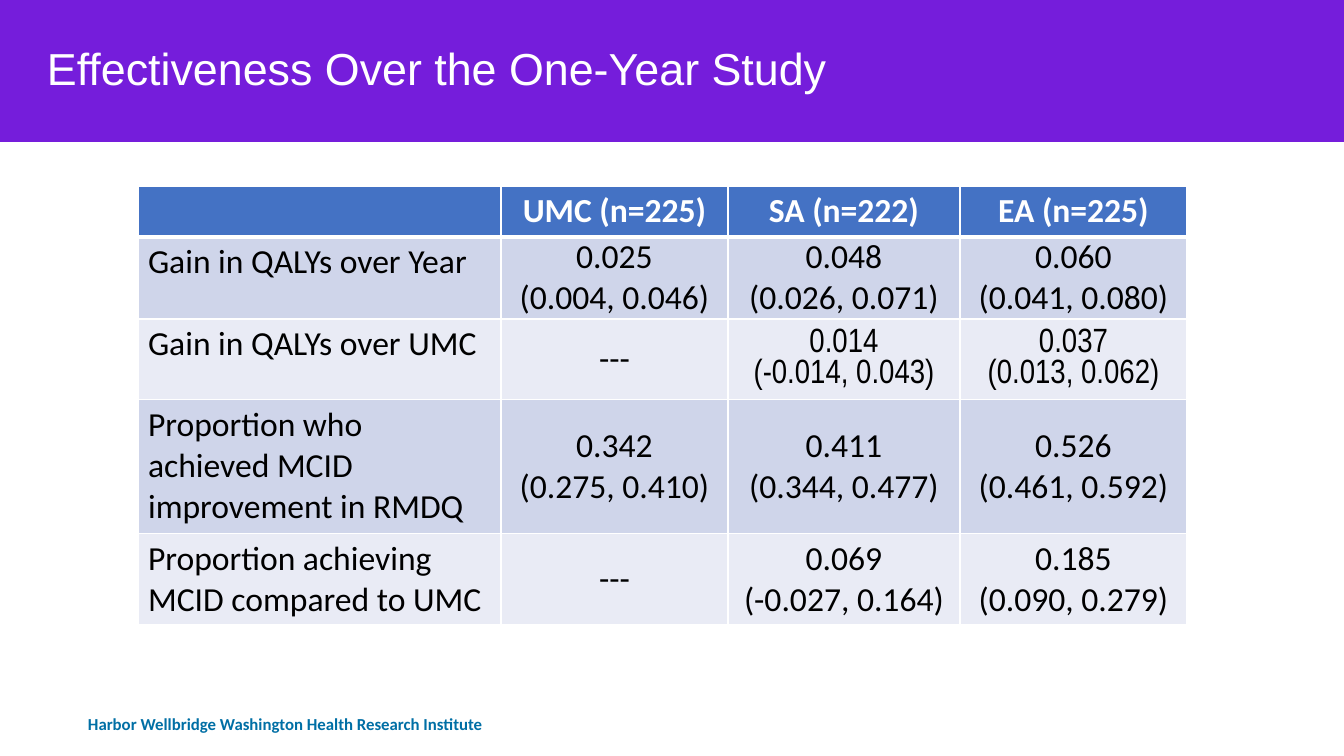
"""Build the slide on effectiveness over the one-year study."""
from typing import Any, NamedTuple

from lxml.etree import SubElement
from pptx import Presentation
from pptx.dml.color import RGBColor
from pptx.enum.shapes import MSO_SHAPE
from pptx.enum.text import MSO_ANCHOR, PP_ALIGN
from pptx.oxml.ns import qn
from pptx.util import Emu, Pt

COLOURS = {
    "banner": "751DDB", "header": "4472C4", "band_dark": "CFD5EA",
    "band_light": "E9EBF5", "white": "FFFFFF", "black": "000000", "footer": "006FA5",
}
COLUMN_WIDTHS = (363, 227, 232, 227)
SIDES = ("lnL", "lnR", "lnT", "lnB")


class Label(NamedTuple):
    text: str
    box: tuple[int, int, int, int]
    insets: tuple[int, int, int, int]
    anchor: MSO_ANCHOR
    font: dict[str, Any]
    colour: str


class Row(NamedTuple):
    height: int
    fill: str
    cells: tuple[str, ...]
    narrow: tuple[int, ...] = ()


LABELS = (
    Label("Harbor Wellbridge Washington Health Research Institute", (78, 710, 806, 29),
          (10, 5, 0, 5), MSO_ANCHOR.BOTTOM,
          {"name": "Calibri", "size": Pt(12), "bold": True}, "footer"),
    Label("Effectiveness Over the One-Year Study", (47, 14, 1234, 115),
          (0, 0, 0, 0), MSO_ANCHOR.MIDDLE,
          {"name": "Arial", "size": Pt(32), "bold": False}, "white"),
)
ROWS = (
    Row(51, "header", ("", "UMC (n=225)", "SA (n=222)", "EA (n=225)")),
    Row(82, "band_dark", ("Gain in QALYs over Year", "0.025\n(0.004, 0.046)",
                          "0.048\n(0.026, 0.071)", "0.060\n(0.041, 0.080)")),
    Row(63, "band_light", ("Gain in QALYs over UMC", "---",
                           "0.014\n(-0.014, 0.043)", "0.037\n(0.013, 0.062)"), (2, 3)),
    Row(134, "band_dark", ("Proportion who achieved MCID improvement in RMDQ",
                           "0.342\n(0.275, 0.410)", "0.411\n(0.344, 0.477)",
                           "0.526\n(0.461, 0.592)")),
    Row(91, "band_light", ("Proportion achieving MCID compared to UMC", "---",
                           "0.069\n(-0.027, 0.164)", "0.185\n(0.090, 0.279)")),
)


def px(length: int) -> Emu:
    return Emu(round(length * 914400 / 100.8))


def rgb(name: str) -> RGBColor:
    return RGBColor.from_string(COLOURS[name])


def apply(target: Any, values: dict[str, Any]) -> None:
    for name, value in values.items():
        setattr(target, name, value)


def margins(insets: tuple[int, int, int, int]) -> dict[str, Emu]:
    names = ("margin_left", "margin_top", "margin_right", "margin_bottom")
    return dict(zip(names, map(px, insets)))


def add_banner(page: Any) -> None:
    banner = page.shapes.add_shape(MSO_SHAPE.RECTANGLE, *map(px, (0, 0, 1344, 142)))
    banner.shadow.inherit = False
    banner.fill.solid()
    banner.fill.fore_color.rgb = rgb("banner")
    banner.line.fill.background()


def add_label(page: Any, label: Label) -> None:
    frame = page.shapes.add_textbox(*map(px, label.box)).text_frame
    apply(frame, {"word_wrap": True, "vertical_anchor": label.anchor, **margins(label.insets)})
    para = frame.paragraphs[0]
    para.line_spacing = 0.9
    span = para.add_run()
    span.text = label.text
    apply(span.font, label.font)
    span.font.color.rgb = rgb(label.colour)


def add_borders(cell: Any, row_index: int) -> None:
    properties = cell._tc.get_or_add_tcPr()
    for side in SIDES:
        thick = (row_index, side) in ((0, "lnB"), (1, "lnT"))
        line = SubElement(properties, qn(f"a:{side}"), w=str(Pt(3 if thick else 1)))
        fill = SubElement(line, qn("a:solidFill"))
        SubElement(fill, qn("a:srgbClr"), val=COLOURS["white"])


def fill_cell(cell: Any, row: Row, row_index: int, column: int) -> None:
    add_borders(cell, row_index)
    cell.fill.solid()
    cell.fill.fore_color.rgb = rgb(row.fill)
    heading = row_index == 0
    if column:
        cell.vertical_anchor = MSO_ANCHOR.MIDDLE
        if not heading:
            apply(cell, margins((7, 0, 7, 0)))
    cell.text_frame.text = row.cells[column]
    font = {"name": "Arial Narrow" if column in row.narrow else "Calibri",
            "size": Pt(24), "bold": heading}
    for para in cell.text_frame.paragraphs:
        para.alignment = PP_ALIGN.CENTER if column else PP_ALIGN.LEFT
        for span in para.runs:
            apply(span.font, font)
            span.font.color.rgb = rgb("white" if heading else "black")


def add_results(page: Any) -> None:
    size = (sum(COLUMN_WIDTHS), sum(row.height for row in ROWS))
    table = page.shapes.add_table(len(ROWS), len(COLUMN_WIDTHS),
                                  *map(px, (138, 186, *size))).table
    for column, width in zip(table.columns, COLUMN_WIDTHS):
        column.width = px(width)
    for row_index, row in enumerate(ROWS):
        table.rows[row_index].height = px(row.height)
        for column in range(len(COLUMN_WIDTHS)):
            fill_cell(table.cell(row_index, column), row, row_index, column)


def main() -> None:
    deck = Presentation()
    apply(deck, {"slide_width": px(1344), "slide_height": px(756)})
    page = deck.slides.add_slide(deck.slide_layouts[6])
    add_banner(page)
    for label in LABELS:
        add_label(page, label)
    add_results(page)
    deck.save("out.pptx")


if __name__ == "__main__":
    main()
